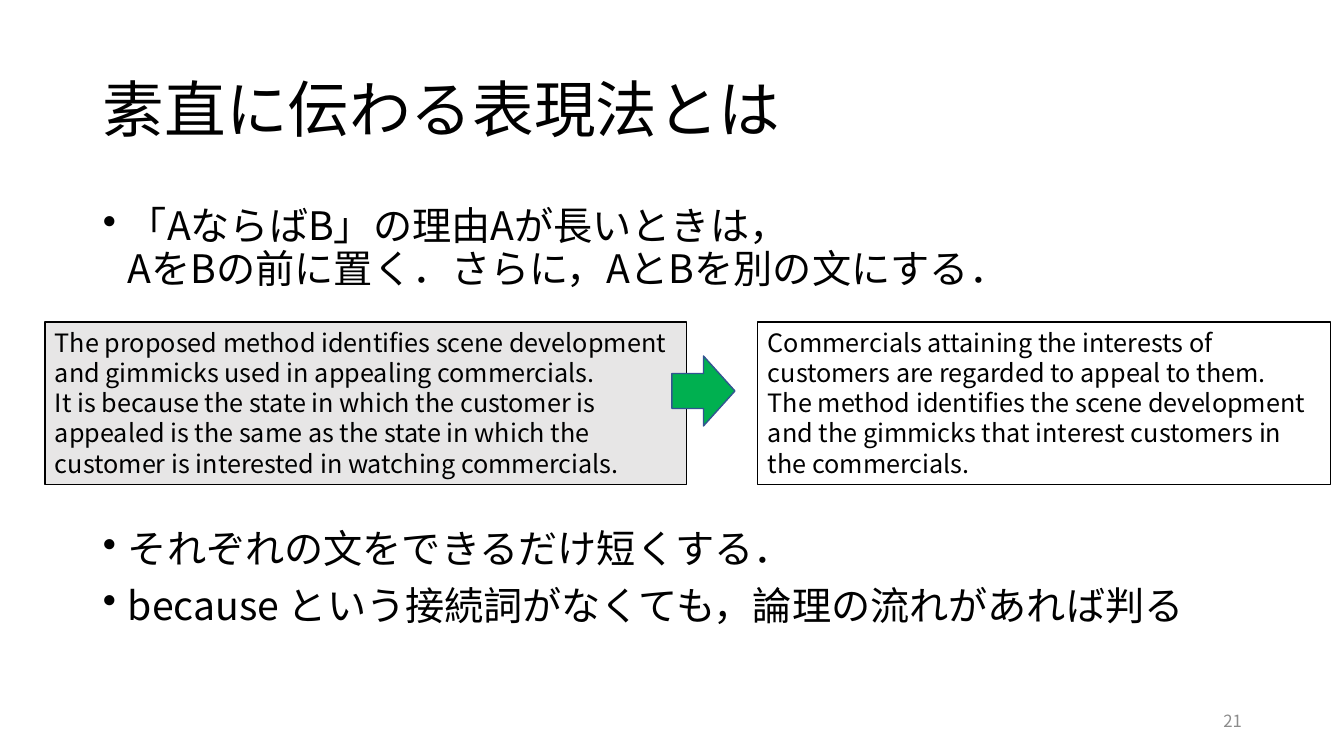
from lxml.etree import SubElement
from pptx import Presentation
from pptx.dml.color import RGBColor
from pptx.enum.shapes import MSO_SHAPE
from pptx.enum.text import MSO_ANCHOR, PP_ALIGN
from pptx.oxml.ns import qn
from pptx.util import Pt

FONT = "Noto Sans CJK JP"
BLACK = "000000"
TITLE = "素直に伝わる表現法とは"
PAGE_NUMBER = "21"
BULLET_GROUPS = [
    (202, 110, ["「AならばB」の理由Aが長いときは，\vAをBの前に置く．さらに，AとBを別の文にする．"]),
    (525, 156, ["それぞれの文をできるだけ短くする．",
                "because という接続詞がなくても，論理の流れがあれば判る"]),
]
EXAMPLES = [
    (45, 642, "E7E6E6", [
        "The proposed method identifies scene development and gimmicks used in appealing commercials.",
        "It is because the state in which the customer is appealed is the same as the state "
        "in which the customer is interested in watching commercials.",
    ]),
    (758, 573, None, [
        "Commercials attaining the interests of customers are regarded to appeal to them.",
        "The method identifies the scene development and the gimmicks that interest customers "
        "in the commercials.",
    ]),
]
EXAMPLE_TOP, EXAMPLE_HEIGHT = 322, 163
ARROW = (672, 356, 63, 70)
LEFT, WIDTH = 93, 1159
INDENT = 25


def px(length):
    return round(length * 914400 / 100.8)


def color(value):
    return RGBColor.from_string(value)


def write(box, lines, size, ink=BLACK, anchor=MSO_ANCHOR.TOP, align=PP_ALIGN.LEFT, spacing=1.0):
    frame = box.text_frame
    frame.word_wrap = True
    frame.vertical_anchor = anchor
    for index, line in enumerate(lines):
        para = frame.add_paragraph() if index else frame.paragraphs[0]
        para.text = line
        para.alignment = align
        para.line_spacing = spacing
        para.font.size = Pt(size)
        para.font.name = FONT
        para.font.color.rgb = color(ink)
        SubElement(para.font._element, qn("a:ea"), typeface=FONT)
    return frame.paragraphs


def add_text(page, area, lines, size, **style):
    return write(page.shapes.add_textbox(*map(px, area)), lines, size, **style)


def add_bullet(para):
    para.space_before = Pt(10)
    properties = para._p.get_or_add_pPr()
    properties.set("marL", str(px(INDENT)))
    properties.set("indent", str(-px(INDENT)))
    bullet = properties.makeelement(qn("a:buChar"), {"char": "•"})
    properties.find(qn("a:defRPr")).addprevious(bullet)


def add_block(page, kind, area, fill, line, line_width):
    block = page.shapes.add_shape(kind, *map(px, area))
    block.shadow.inherit = False
    if fill:
        block.fill.solid()
        block.fill.fore_color.rgb = color(fill)
    else:
        block.fill.background()
    block.line.color.rgb = color(line)
    block.line.width = Pt(line_width)
    return block


def main():
    deck = Presentation()
    deck.slide_width, deck.slide_height = px(1344), px(756)
    page = deck.slides.add_slide(deck.slide_layouts[6])

    add_text(page, (LEFT, 40, WIDTH, 146), [TITLE], 44, anchor=MSO_ANCHOR.MIDDLE, spacing=0.9)
    for top, height, lines in BULLET_GROUPS:
        for para in add_text(page, (LEFT, top, WIDTH, height), lines, 28, spacing=0.9):
            add_bullet(para)
    add_text(page, (950, 701, 302, 40), [PAGE_NUMBER], 12, ink="8C8C8C",
             anchor=MSO_ANCHOR.MIDDLE, align=PP_ALIGN.RIGHT)

    for left, width, fill, lines in EXAMPLES:
        area = (left, EXAMPLE_TOP, width, EXAMPLE_HEIGHT)
        write(add_block(page, MSO_SHAPE.RECTANGLE, area, fill, BLACK, 0.75), lines, 18)
    add_block(page, MSO_SHAPE.RIGHT_ARROW, ARROW, "00B050", "325491", 1)

    deck.save("out.pptx")


if __name__ == "__main__":
    main()
